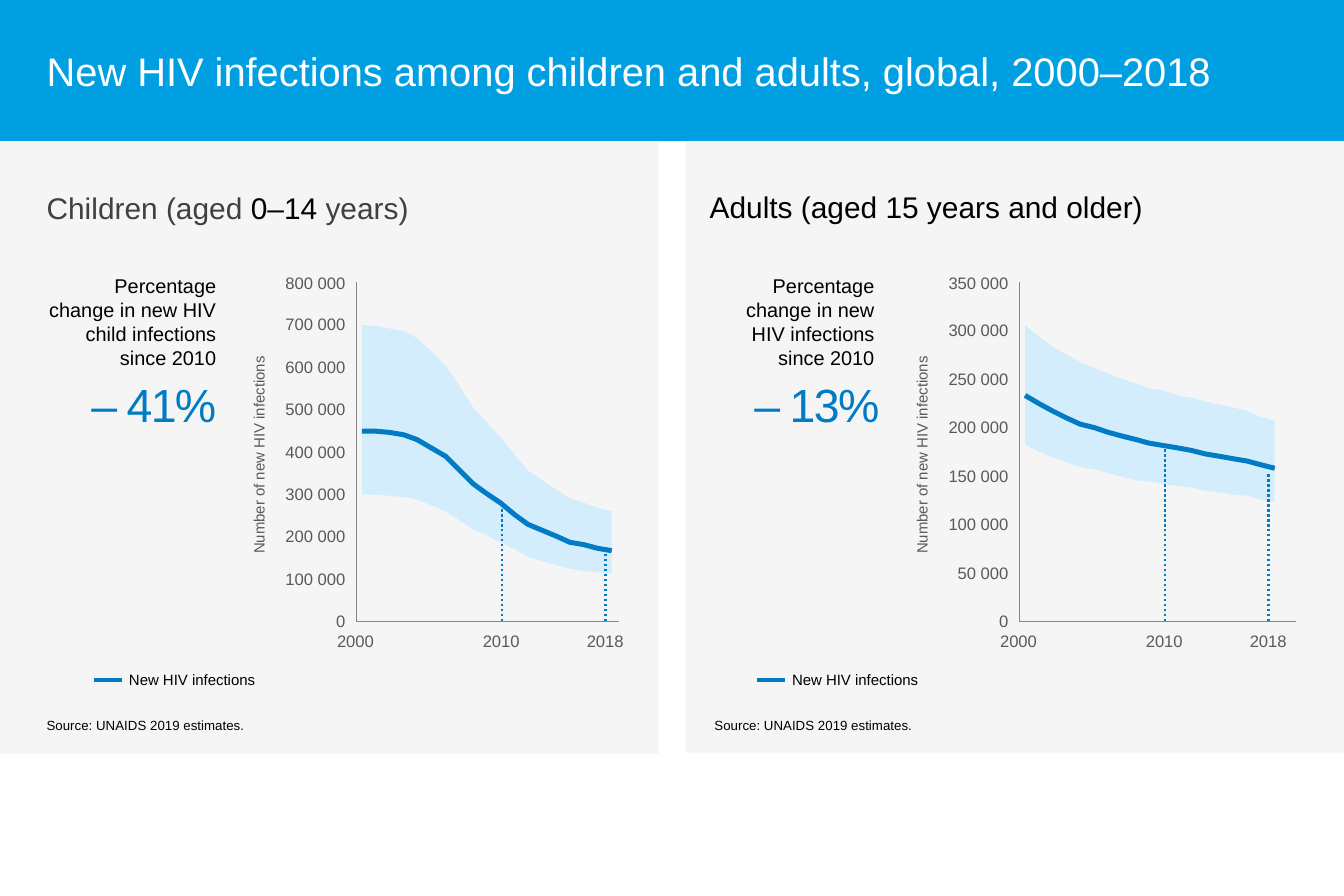
from lxml.etree import SubElement
from pptx import Presentation
from pptx.dml.color import RGBColor
from pptx.enum.dml import MSO_LINE
from pptx.enum.shapes import MSO_CONNECTOR, MSO_SHAPE
from pptx.enum.text import MSO_ANCHOR, PP_ALIGN
from pptx.oxml.ns import qn
from pptx.util import Pt

SCALE = 9144  # EMU per px, 100 px to the inch
HUES = {"sky": "009FE2", "blue": "007BC4", "band": "D4EDFC", "panel": "D9D9D9",
        "axis": "878787", "grey": "595959", "dark": "404040",
        "black": "000000", "white": "FFFFFF"}
LEFT, MID, RIGHT = PP_ALIGN.LEFT, PP_ALIGN.CENTER, PP_ALIGN.RIGHT
TOP, BASE = 236, 520
SIDES = ("margin_left", "margin_top", "margin_right", "margin_bottom")

PANELS = [
    {"at": (0, 119), "inset": 39, "shift": 0, "source": 0, "end": 518,
     "title": [("Children (aged ", "dark"), ("0–14 ", "black"), ("years)", "dark")],
     "note": "Percentage change in new HIV child infections since 2010",
     "wide": 142, "change": "– 41%", "step": 100, "count": 8, "drops": (426, 462),
     "high": [272, 273, 275, 277, 283, 294, 306, 322, 341, 353, 366, 381, 394,
              402, 410, 417, 421, 425, 428],
     "line": [361, 361, 362, 364, 368, 375, 382, 393, 405, 413, 421, 431, 439,
              444, 449, 454, 456, 459, 461],
     "low": [414, 414, 415, 416, 418, 423, 428, 435, 443, 448, 454, 460, 466,
             470, 473, 476, 478, 479, 480]},
    {"at": (574, 118), "inset": 20, "shift": 555, "source": 559, "end": 530,
     "title": [("Adults (aged 15 years and older)", "black")],
     "note": "Percentage change in new HIV infections since 2010",
     "wide": 138, "change": "– 13%", "step": 50, "count": 7, "drops": (374, 395),
     "high": [272, 282, 290, 297, 303, 308, 313, 317, 321, 325, 327, 331, 333,
              336, 339, 341, 344, 349, 352],
     "line": [331, 338, 344, 350, 355, 358, 362, 365, 368, 371, 373, 375, 377,
              380, 382, 384, 386, 389, 392],
     "low": [372, 378, 383, 387, 391, 393, 396, 399, 402, 403, 405, 407, 408,
             411, 412, 414, 415, 418, 420]},
]


class Deck:
    def __init__(self):
        self.file = Presentation()
        self.file.slide_width, self.file.slide_height = 1125 * SCALE, 750 * SCALE
        self.slide = self.file.slides.add_slide(self.file.slide_layouts[6])
        self.shapes = self.slide.shapes
        self.font = "Arial"

    def hue(self, name):
        return RGBColor.from_string(HUES[name])

    def size(self, *px):
        return [n * SCALE for n in px]

    def words(self, shape, runs, pt, align=LEFT, inset=(0, 0, 0, 0),
              wrap=True, anchor=MSO_ANCHOR.TOP, turn=None, space=None):
        """Fill a shape with one paragraph made of (text, colour) runs."""
        frame = shape.text_frame
        form = dict(zip(SIDES, self.size(*inset)), word_wrap=wrap,
                    vertical_anchor=anchor)
        for key, value in form.items():
            setattr(frame, key, value)
        if turn:
            frame._txBody.bodyPr.set("vert", turn)
        para = frame.paragraphs[0]
        para.alignment = align
        for text, tint in runs:
            run = para.add_run()
            run.text = text
            for key, value in {"name": self.font, "size": Pt(pt)}.items():
                setattr(run.font, key, value)
            run.font.color.rgb = self.hue(tint)
            if space:
                run._r.get_or_add_rPr().set("spc", str(space))

    def text(self, x, y, w, h, label, pt, tint="black", **form):
        box = self.shapes.add_textbox(*self.size(x, y, w, h))
        self.words(box, [(label, tint)], pt, **form)

    def rect(self, x, y, w, h, tint, alpha=None):
        box = self.shapes.add_shape(MSO_SHAPE.RECTANGLE, *self.size(x, y, w, h))
        self.paint(box, tint)
        if alpha:
            fill = box.fill._xPr.find(qn("a:solidFill"))
            SubElement(fill[0], qn("a:alpha"), val=str(alpha * 1000))
        return box

    def paint(self, shape, tint):
        shape.shadow.inherit = False
        shape.fill.solid()
        shape.fill.fore_color.rgb = self.hue(tint)
        shape.line.fill.background()

    def line(self, x1, y1, x2, y2, tint, pt, dash=None):
        rule = self.shapes.add_connector(MSO_CONNECTOR.STRAIGHT,
                                         *self.size(x1, y1, x2, y2))
        SubElement(rule._element.spPr, qn("a:effectLst"))
        self.stroke(rule, tint, pt)
        if dash:
            rule.line.dash_style = dash

    def stroke(self, shape, tint, pt):
        shape.line.color.rgb = self.hue(tint)
        shape.line.width = Pt(pt)

    def free(self, dots, close):
        pen = self.shapes.build_freeform(*dots[0], scale=SCALE)
        pen.add_line_segments(dots[1:], close=close)
        return pen.convert_to_shape()

    def area(self, dots, tint):
        self.paint(self.free(dots, True), tint)

    def curve(self, dots, tint, pt):
        shape = self.free(dots, False)
        shape.shadow.inherit = False
        shape.fill.background()
        self.stroke(shape, tint, pt)

    def axes(self, dx, end, step, count):
        for i in range(count + 1):
            value = step * (count - i)
            label = f"{value} 000" if value else "0"
            wide = 7 * len(label) + 1
            self.text(dx + 289 - wide, 228 + round(283 * i / count), wide, 17,
                      label, 10, "grey", align=RIGHT, wrap=False,
                      anchor=MSO_ANCHOR.MIDDLE)
        for x, year in ((280, "2000"), (402, "2010"), (489, "2018")):
            self.text(dx + x, 528, 35, 13, year, 10, "grey", align=MID)
        self.text(dx + 209, 297, 15, 168, "Number of new HIV infections", 9,
                  "grey", align=MID, turn="vert270")
        self.line(dx + 298, BASE, dx + 298, TOP, "axis", 0.25)
        self.line(dx + 298, BASE, dx + end, BASE, "axis", 0.25)

    def plot(self, dx, high, line, low, drops):
        """Draw the range, the estimate and the dotted lines to the years."""
        years = [dx + 303 + round(209 * i / 18) for i in range(19)]
        edge = list(zip(years, high))
        self.area(list(zip(years, low)) + edge[::-1], "band")
        self.curve(list(zip(years, line)), "blue", 3)
        for x, y in zip((420, 507), drops):
            self.line(dx + x, BASE, dx + x, y, "blue", 1.5, MSO_LINE.ROUND_DOT)

    def panel(self, part):
        dx = part["shift"]
        box = self.rect(*part["at"], 551, 512, "panel", 25)
        self.words(box, part["title"], 18, inset=(part["inset"], 40, 0, 0))
        self.text(part["source"], 600, 207, 13, "Source: UNAIDS 2019 estimates.",
                  8, inset=(39, 0, 0, 0), wrap=False)
        self.text(dx + 108, 561, 107, 15, "New HIV infections", 9, wrap=False)
        self.line(dx + 79, 569, dx + 102, 569, "blue", 2.5)
        self.text(dx + 39, 228, part["wide"], 81, part["note"], 12,
                  align=RIGHT, inset=(0, 1, 0, 0))
        self.text(dx + 39, 312, 142, 42, part["change"], 28, "blue",
                  align=RIGHT, inset=(0, 3, 0, 0), space=-100)
        self.axes(dx, part["end"], part["step"], part["count"])
        self.plot(dx, part["high"], part["line"], part["low"], part["drops"])


def main():
    deck = Deck()
    deck.rect(0, 0, 1125, 118, "sky")
    deck.text(0, 0, 1125, 118,
              "New HIV infections among children and adults, global, 2000–2018",
              24, "white", inset=(39, 5, 10, 5), anchor=MSO_ANCHOR.MIDDLE)
    for part in PANELS:
        deck.panel(part)
    deck.file.save("out.pptx")


if __name__ == "__main__":
    main()
